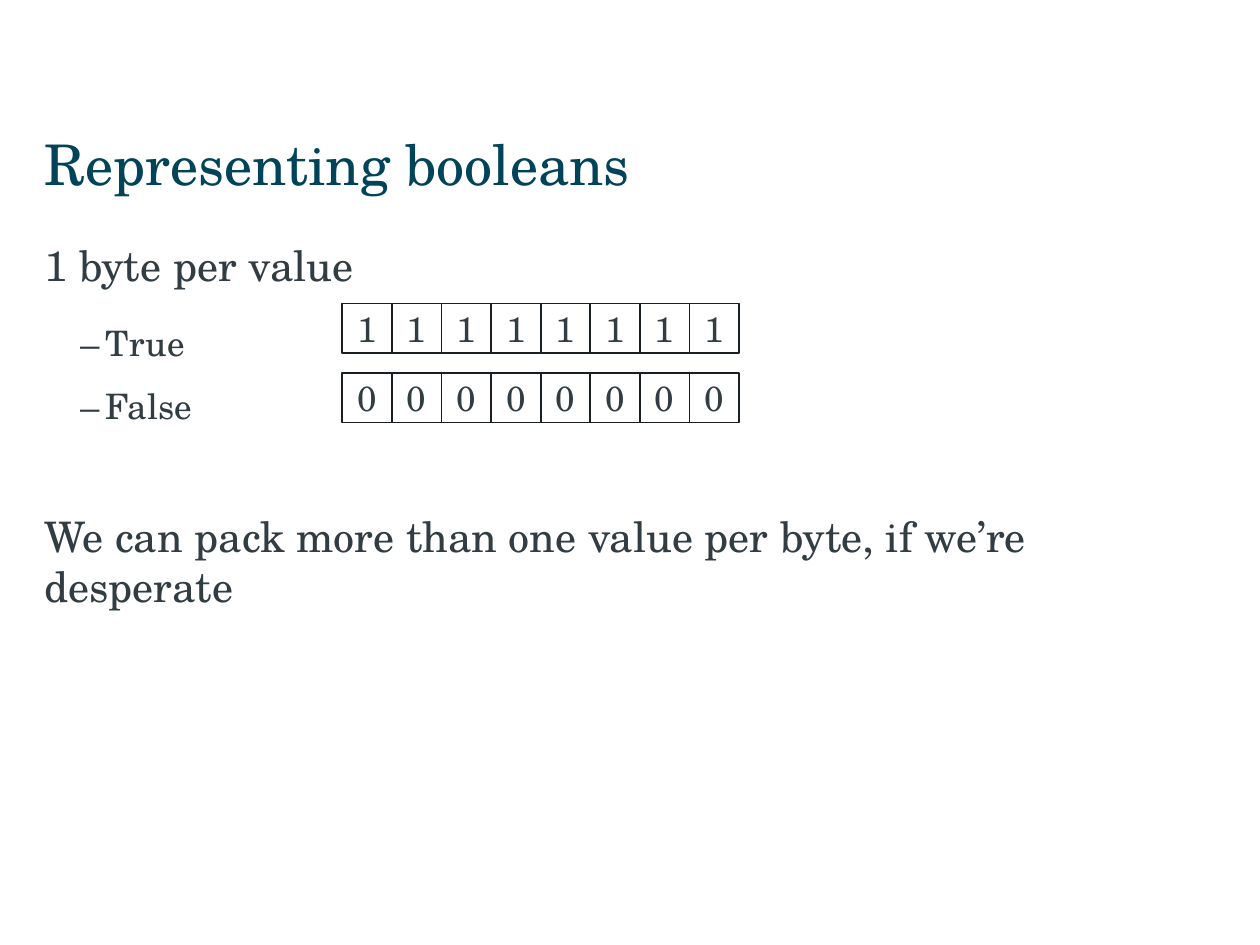
from lxml.etree import SubElement
from pptx import Presentation
from pptx.dml.color import RGBColor
from pptx.enum.shapes import MSO_SHAPE as Shape
from pptx.enum.text import MSO_ANCHOR as Anchor, PP_ALIGN as Align
from pptx.oxml.ns import qn
from pptx.util import Cm, Pt

COLOURS = {"title": "014359", "text": "323D43", "cell": "FFFFFF", "border": "191F22"}
FONT = "TeX Gyre Schola"


def format_runs(paragraph, size, colour):
    for run in paragraph.runs:
        run.font.name = FONT
        run.font.size = Pt(size)
        run.font.color.rgb = RGBColor.from_string(COLOURS[colour])


def add_frame(top, height):
    frame = slide.shapes.add_textbox(Cm(0.89), Cm(top), Cm(23.6), Cm(height)).text_frame
    frame.word_wrap = True
    frame.margin_left = 0
    return frame


deck = Presentation()
deck.slide_width, deck.slide_height = Cm(25.4), Cm(19.05)
slide = deck.slides.add_slide(deck.slide_layouts[6])

# Title
title = add_frame(2.49, 1.8)
title.text = "Representing booleans"
format_runs(title.paragraphs[0], 32, "title")

# Body: text, level, space before
points = [
    ("1 byte per value", 0, 0),
    ("True", 1, 0),
    ("False", 1, 0),
    ("We can pack more than one value per byte, if we’re desperate", 0, 36),
]
body = add_frame(4.7, 12.42)
for index, (words, level, gap) in enumerate(points):
    point = body.add_paragraph() if index else body.paragraphs[0]
    point.text = words
    point.level = level
    point.space_before = Pt(gap)
    point.space_after = Pt(12 if level else 18)
    format_runs(point, 20 if level else 24, "text")
    if level:
        properties = point._p.get_or_add_pPr()
        properties.set("marL", str(Cm(1.24)))
        properties.set("indent", str(Cm(-0.5)))
        SubElement(properties, qn("a:buFont"), typeface=FONT)
        SubElement(properties, qn("a:buChar"), char="–")

# Bytes: one group of eight bit cells each
for bits, top in [("00000000", 7.52), ("11111111", 6.12)]:
    byte = slide.shapes.add_group_shape()
    for column, bit in enumerate(bits):
        cell = byte.shapes.add_shape(
            Shape.RECTANGLE, Cm(6.9 + column), Cm(top), Cm(1), Cm(1))
        cell.shadow.inherit = False
        cell.fill.solid()
        cell.fill.fore_color.rgb = RGBColor.from_string(COLOURS["cell"])
        cell.line.color.rgb = RGBColor.from_string(COLOURS["border"])
        cell.line.width = Pt(1)
        label = cell.text_frame
        label.margin_left = label.margin_right = label.margin_top = label.margin_bottom = 0
        label.word_wrap = False
        label.vertical_anchor = Anchor.MIDDLE
        label.text = bit
        label.paragraphs[0].alignment = Align.CENTER
        format_runs(label.paragraphs[0], 20, "text")

deck.save("out.pptx")
